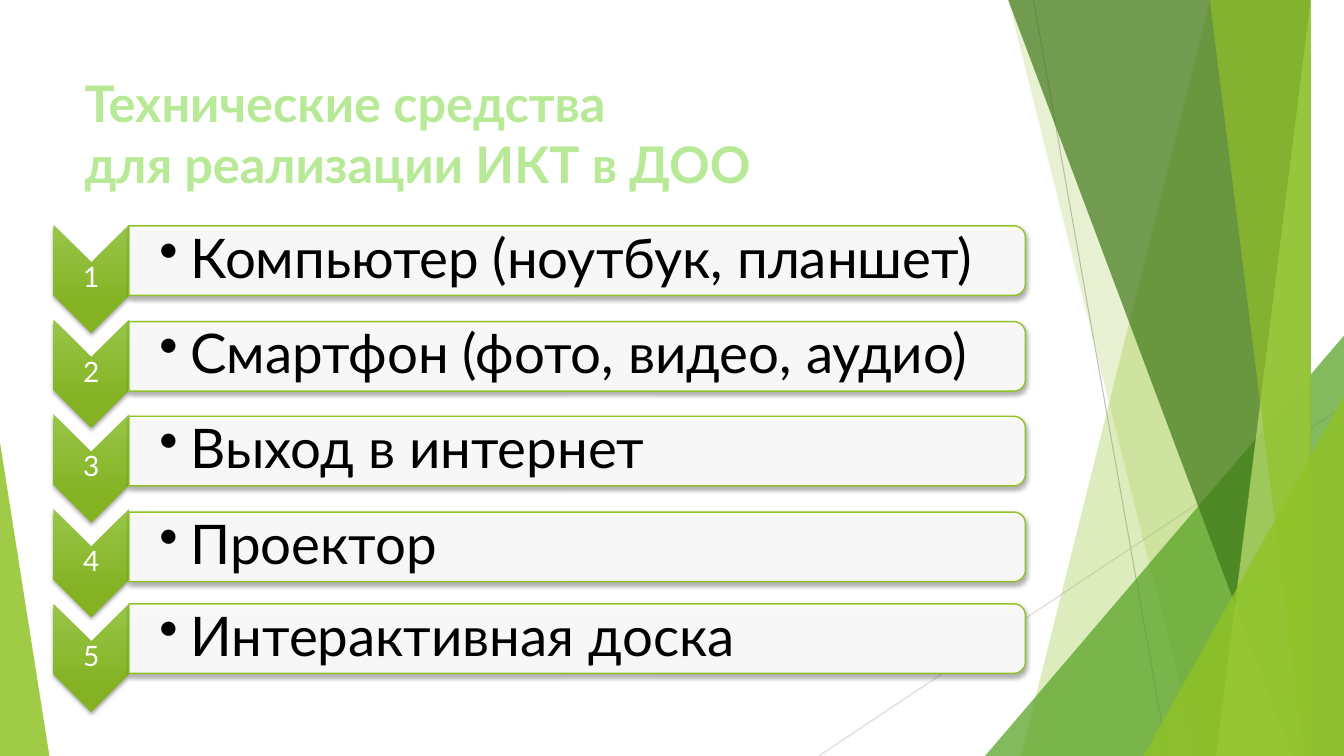
from pptx import Presentation, util as u
from pptx.dml.color import RGBColor
from pptx.enum import shapes, text
from pptx.oxml import parse_xml
from pptx.oxml.ns import qn
from lxml import etree

# Content: item and top of its bar
TITLE = "Технические средства\vдля реализации ИКТ в ДОО"
ITEMS = [
    ("Компьютер (ноутбук, планшет)", 2.24),
    ("Смартфон (фото, видео, аудио)", 3.19),
    ("Выход в интернет", 4.13),
    ("Проектор", 5.08),
    ("Интерактивная доска", 5.99),
]

# Format
W, H = 13.33, 7.5
FONT = "Lato"
WHITE, BLACK = RGBColor(255, 255, 255), RGBColor(0, 0, 0)
LIME, PALE_LIME = RGBColor(0x90, 0xC2, 0x26), RGBColor(0xC0, 0xE4, 0x74)
GREEN, DARK_GREEN = RGBColor(0x54, 0xA0, 0x21), RGBColor(0x3F, 0x78, 0x19)
TITLE_GREEN = RGBColor(0xB7, 0xE9, 0x96)
GRAD_TOP, GRAD_END = RGBColor(0x97, 0xC5, 0x47), RGBColor(0x84, 0xB2, 0x23)
GREY, LIGHT_GREY = RGBColor(0xBF, 0xBF, 0xBF), RGBColor(0xD9, 0xD9, 0xD9)
NS = 'xmlns:a="http://schemas.openxmlformats.org/drawingml/2006/main"'

# Background: lines, then facets from back to front
LINES = [((10.25, 0), (11.58, H), GREY), ((W, 4.03), (8.12, H), LIGHT_GREY)]
# A band runs from its top-left x to its bottom-left x and on to the right edge;
# a triangle has a box and the position of its tip.
FACETS = [
    ("band", (12.28, 10.04), LIME, 30),
    ("band", (10.5, 11.83), LIME, 20),
    ("triangle", (9.77, 3.33, 3.56, 1), GREEN, 72),
    ("band", (10.21, 12.91), DARK_GREEN, 70),
    ("band", (13.03, 11.92), PALE_LIME, 70),
    ("band", (11.96, 13.18), LIME, 65),
    ("triangle", (11.34, 3.93, 1.99, 1), LIME, 80),
    ("triangle", (0, 4.39, 0.49, 0), LIME, 85),
]
BAND_TOP = -0.01

# List grid
CHEV_X, CHEV_Y, CHEV_W, CHEV_H, CHEV_STEP = 0.53, 2.23, 0.75, 1.07, 0.94
BAR_X, BAR_W, BAR_H = 1.28, 8.89, 0.69

prs = Presentation()
prs.slide_width, prs.slide_height = u.Inches(W), u.Inches(H)
s = prs.slides.add_slide(prs.slide_layouts[6])


def inches(*values):
    return [u.Inches(v) for v in values]


def fill(sp, color, opacity):
    sp.shadow.inherit = False
    sp.fill.solid()
    sp.fill.fore_color.rgb = color
    clr = sp._element.spPr.find(qn("a:solidFill"))[0]
    etree.SubElement(clr, qn("a:alpha"), val=str(opacity * 1000))
    sp.line.fill.background()


def drop_shadow(sp):
    sp.shadow.inherit = False
    sp._element.spPr.find(qn("a:effectLst")).append(parse_xml(
        f'<a:outerShdw {NS} blurRad="38100" dist="25400" dir="5400000" rotWithShape="0">'
        '<a:srgbClr val="000000"><a:alpha val="35000"/></a:srgbClr></a:outerShdw>'))


def turned(kind, x, y, w, h):
    """Shape turned a quarter clockwise that fills the given box."""
    sp = s.shapes.add_shape(kind, *inches(x + (w - h) / 2, y + (h - w) / 2, h, w))
    sp.rotation = 90
    return sp


def label(words, box, margins, anchor, font, para):
    tf = s.shapes.add_textbox(*inches(*box)).text_frame
    tf.word_wrap, tf.vertical_anchor = True, anchor
    for side, m in zip(("left", "top", "right", "bottom"), margins):
        setattr(tf, "margin_" + side, u.Inches(m))
    p = tf.paragraphs[0]
    p.text = words
    for name, value in para.items():
        setattr(p, name, value)
    for r in p.runs:
        r.font.name = FONT
        r.font.color.rgb = font["color"]
        r.font.size = u.Pt(font["size"])
        r.font.bold = font.get("bold", False)
    return p


# Background lines
for start, end, color in LINES:
    line = s.shapes.add_connector(shapes.MSO_CONNECTOR.STRAIGHT, *inches(*start, *end))
    line.line.color.rgb, line.line.width = color, u.Pt(0.75)
    etree.SubElement(line._element.spPr, qn("a:effectLst"))

# Background facets
for kind, geometry, color, opacity in FACETS:
    if kind == "band":
        top_x, bottom_x = geometry
        fb = s.shapes.build_freeform(top_x, BAND_TOP, scale=u.Inches(1))
        fb.add_line_segments([(W, BAND_TOP), (W, H), (bottom_x, H)], close=True)
        sp = fb.convert_to_shape()
    else:
        x, y, w, tip = geometry
        sp = s.shapes.add_shape(shapes.MSO_SHAPE.ISOSCELES_TRIANGLE,
                                *inches(x, y, w, H - y))
        sp.adjustments[0] = tip
    fill(sp, color, opacity)

# Numbered list
for i, (item, bar_y) in enumerate(ITEMS):
    chev_y = CHEV_Y + i * CHEV_STEP
    chevron = turned(shapes.MSO_SHAPE.CHEVRON, CHEV_X, chev_y, CHEV_W, CHEV_H)
    chevron.fill.gradient()
    chevron.fill.gradient_angle = 270
    for stop, color, place in zip(chevron.fill.gradient_stops,
                                  (GRAD_TOP, GRAD_END), (0, 0.78)):
        stop.color.rgb, stop.position = color, place
    chevron._element.spPr.find(qn("a:gradFill")).set("rotWithShape", "0")
    chevron.line.fill.background()
    drop_shadow(chevron)
    label(str(i + 1), (CHEV_X, chev_y + 0.37, CHEV_W, 0.32), [0.01] * 4,
          text.MSO_ANCHOR.MIDDLE, {"size": 20, "color": WHITE},
          {"alignment": text.PP_ALIGN.CENTER, "line_spacing": 0.9})

    bar = turned(shapes.MSO_SHAPE.ROUND_2_SAME_RECTANGLE, BAR_X, bar_y, BAR_W, BAR_H)
    fill(bar, WHITE, 90)
    bar.line.color.rgb, bar.line.width = LIME, u.Pt(1)
    drop_shadow(bar)
    p = label(item, (BAR_X, bar_y + 0.03, 8.86, 0.63), (0.3, 0.03, 0.03, 0.03),
              text.MSO_ANCHOR.MIDDLE, {"size": 39, "color": BLACK},
              {"level": 1, "line_spacing": 0.9})
    pPr = p._p.get_or_add_pPr()
    pPr.set("marL", str(u.Inches(0.31)))
    pPr.set("indent", str(u.Inches(-0.31)))
    etree.SubElement(pPr, qn("a:buChar"), char="•")

# Title
label(TITLE, (0.74, 0.67, 9.67, 1.44), (0.1, 0.05, 0.1, 0.05), text.MSO_ANCHOR.TOP,
      {"size": 36, "color": TITLE_GREEN, "bold": True}, {})

prs.save("out.pptx")
